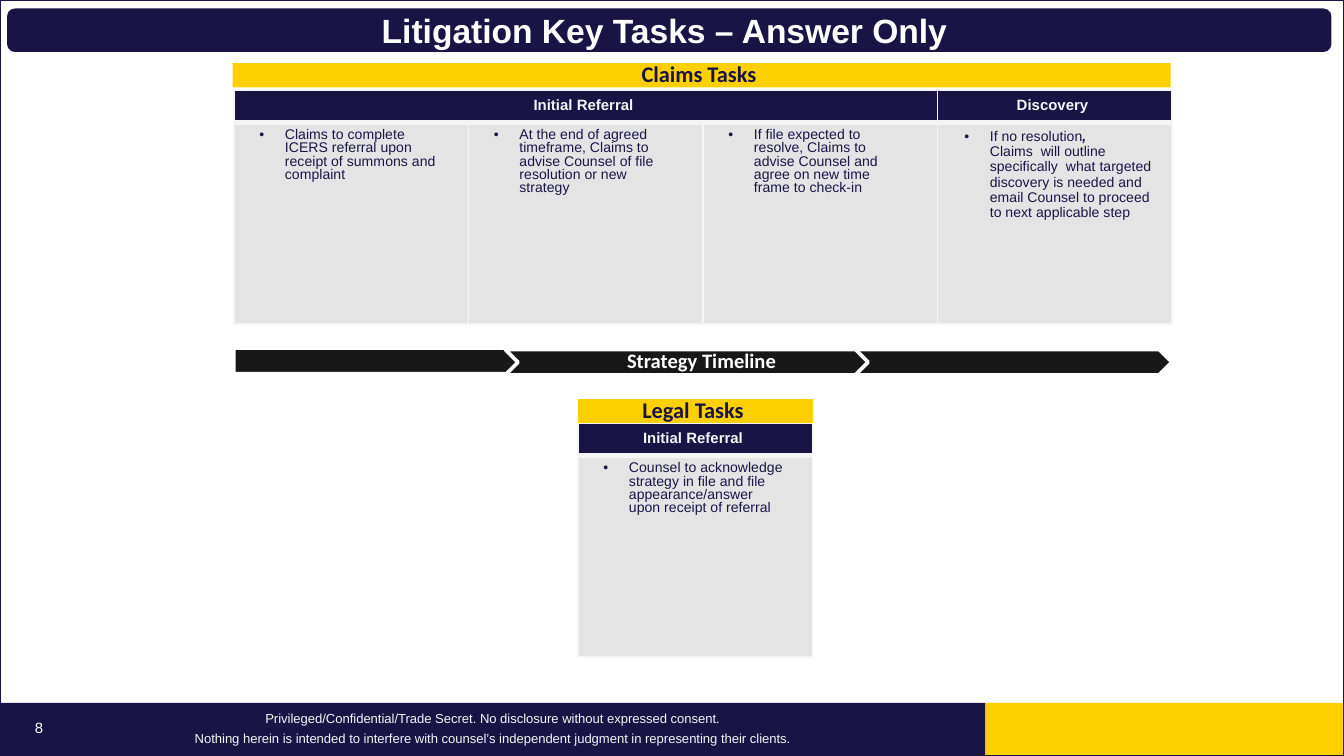
from lxml import etree
from pptx import Presentation
from pptx.dml.color import RGBColor
from pptx.enum.shapes import MSO_SHAPE as SHAPE
from pptx.enum.text import MSO_ANCHOR as ANCHOR, PP_ALIGN as ALIGN
from pptx.oxml.ns import qn
from pptx.util import Inches, Pt

# Content
NB = chr(160)  # no-break space
TITLE = "Litigation Key Tasks – Answer Only "
CLAIMS_HEADING, LEGAL_HEADING, TIMELINE = "Claims Tasks ", f"Legal Tasks{NB}", "Strategy Timeline"
CLAIMS_HEADERS = [(f"Initial Referral{NB}", 3), (f"Discovery{NB}", 1)]  # text, columns spanned
CLAIMS_TASKS = [
    [f"Claims to complete ICERS referral upon receipt of summons and complaint{NB}"],
    ["At the end of agreed timeframe, Claims to advise Counsel of file resolution or new strategy"],
    [f"If file expected to resolve, Claims to advise{NB}Counsel{NB}and agree on new time frame "
     "to check-in"],
    ["If no resolution", ", ", f"Claims{NB}{NB}will outline specifically{NB} what targeted "
     f"discovery is needed and email Counsel to proceed to next applicable step{NB}"],
]
LEGAL_HEADERS = [(f"Initial Referral{NB}", 1)]
LEGAL_TASKS = [["Counsel to acknowledge strategy in file and file appearance/answer "
                f"upon receipt of referral{NB}"]]
FOOTER = [
    "Privileged/Confidential/Trade Secret. No disclosure without expressed consent.",
    "Nothing herein is intended to interfere with counsel’s independent judgment in "
    "representing their clients.",
]
PAGE = "8"

COLORS = {"navy": "1A1446", "yellow": "FFD000", "white": "FFFFFF", "black": "181818",
          "light": "F5F5F5", "gray": "E4E4E4"}
W, H = 10, 10 * 9 / 16
LEFT, COL_W, ROW_H = 1.74, 1.745, (0.24, 1.5)
LEGAL_LEFT = 4.3

prs = Presentation()
prs.slide_width, prs.slide_height = Inches(W), Inches(H)
s = prs.slides.add_slide(prs.slide_layouts[6])


def rgb(name):
    return RGBColor.from_string(COLORS[name])


def add_shape(kind, x, y, w, h, fill=None, line=None, line_pt=1):
    sp = s.shapes.add_shape(kind, Inches(x), Inches(y), Inches(w), Inches(h))
    sp.shadow.inherit = False
    if fill:
        sp.fill.solid()
        sp.fill.fore_color.rgb = rgb(fill)
    else:
        sp.fill.background()
    if line:
        sp.line.color.rgb = rgb(line)
        sp.line.width = Pt(line_pt)
    else:
        sp.line.fill.background()
    return sp


def style(p, size, color, font="Arial", bold=False, align=ALIGN.CENTER, spacing=None):
    p.alignment = align
    if spacing:
        p.line_spacing = spacing
    for r in p.runs:
        r.font.size, r.font.name, r.font.bold = Pt(size), font, bold
        r.font.color.rgb = rgb(color)


def add_label(sp, text, size, color, font="Calibri", spacing=0.9, sides=(0.05, 0.05)):
    tf = sp.text_frame
    tf.word_wrap = True
    tf.vertical_anchor = ANCHOR.MIDDLE
    tf.margin_top = tf.margin_bottom = Inches(0.05)
    tf.margin_left, tf.margin_right = map(Inches, sides)
    tf.text = text
    style(tf.paragraphs[0], size, color, font, True, spacing=spacing)


def set_borders(cell, bottom_pt):
    tc_pr = cell._tc.get_or_add_tcPr()
    for i, (side, pt) in enumerate((("L", 1), ("R", 1), ("T", 1), ("B", bottom_pt))):
        ln = etree.Element(qn(f"a:ln{side}"), w=str(Pt(pt)))
        fill = etree.SubElement(ln, qn("a:solidFill"))
        etree.SubElement(fill, qn("a:srgbClr"), val=COLORS["light"])
        tc_pr.insert(i, ln)


def add_bullet(p, indent):
    p_pr = p._p.get_or_add_pPr()
    p_pr.set("marL", str(Inches(indent)))
    p_pr.set("indent", str(Inches(-0.19)))
    etree.SubElement(p_pr, qn("a:buFont"), typeface="Arial")
    etree.SubElement(p_pr, qn("a:buChar"), char="•")


def paint(cell, fill, bottom_pt):
    cell.fill.solid()
    cell.fill.fore_color.rgb = rgb(fill)
    set_borders(cell, bottom_pt)


def add_task_table(x, y, headers, tasks):
    n = len(tasks)
    table = s.shapes.add_table(2, n, Inches(x), Inches(y),
                               Inches(n * COL_W), Inches(sum(ROW_H))).table
    for row, height in zip(table.rows, ROW_H):
        row.height = Inches(height)
    for c, runs in enumerate(tasks):
        table.columns[c].width = Inches(COL_W)
        paint(table.cell(0, c), "navy", 3)
        cell = table.cell(1, c)
        paint(cell, "gray", 1)
        p = cell.text_frame.paragraphs[0]
        mixed = len(runs) > 1  # the discovery task is set a little looser
        cell.margin_right = Inches(0.1 if mixed else 0.22)
        add_bullet(p, 0.29 if mixed else 0.28)
        for text in runs:
            p.add_run().text = text
        style(p, 7.5, "navy", align=ALIGN.LEFT, spacing=Pt(8.2) if mixed else 0.85)
        if mixed:
            p.runs[1].font.bold = p.runs[1].font.italic = True
    c = 0
    for text, span in headers:
        cell = table.cell(0, c)
        if span > 1:
            cell.merge(table.cell(0, c + span - 1))
        cell.vertical_anchor = ANCHOR.MIDDLE
        cell.text_frame.text = text
        style(cell.text_frame.paragraphs[0], 8, "light", bold=True, spacing=0.85)
        c += span


# Footer and page number
add_shape(SHAPE.RECTANGLE, 7.33, 5.23, 2.67, 0.4, "yellow")
tf = add_shape(SHAPE.RECTANGLE, 0, 5.23, 7.33, 0.4, "navy").text_frame
tf.word_wrap = False
tf.vertical_anchor = ANCHOR.MIDDLE
tf.text = "\n".join(FOOTER)
for p in tf.paragraphs:
    style(p, 7, "light", spacing=0.85)
tf.paragraphs[1].space_before = Pt(3.5)

tf = s.shapes.add_textbox(Inches(0.08), Inches(5.32), Inches(0.34), Inches(0.22)).text_frame
tf.word_wrap = False
tf.text = PAGE
style(tf.paragraphs[0], 8, "white", align=ALIGN.RIGHT, spacing=0.85)

# Title bar
sp = add_shape(SHAPE.ROUNDED_RECTANGLE, 0.06, 0.07, 9.84, 0.31, "navy", "navy")
add_label(sp, TITLE, 18, "white", "Arial", 1.0)

# Claims and legal tasks
for text, x, y, w in ((CLAIMS_HEADING, 1.73, 0.47, 6.98), (LEGAL_HEADING, LEGAL_LEFT, 2.97, 1.75)):
    add_label(add_shape(SHAPE.RECTANGLE, x, y, w, 0.18, "yellow"), text, 12, "navy")
add_task_table(LEFT, 0.67, CLAIMS_HEADERS, CLAIMS_TASKS)
add_task_table(LEGAL_LEFT, 3.15, LEGAL_HEADERS, LEGAL_TASKS)

# Strategy timeline
for kind, x, y, w in ((SHAPE.PENTAGON, LEFT, 2.59, 2.3), (SHAPE.CHEVRON, 6.32, 2.6, 2.4),
                      (SHAPE.CHEVRON, 3.76, 2.6, 2.7)):
    add_shape(kind, x, y, w, 0.19, "black", "white", 2)
add_label(add_shape(SHAPE.RECTANGLE, 4.34, 2.66, 1.71, 0.07, "black"), TIMELINE, 11, "white",
          sides=(0.08, 0.03))

# Slide frame
add_shape(SHAPE.RECTANGLE, 0, 0, W, H, line="navy", line_pt=0.75)

prs.save("out.pptx")
